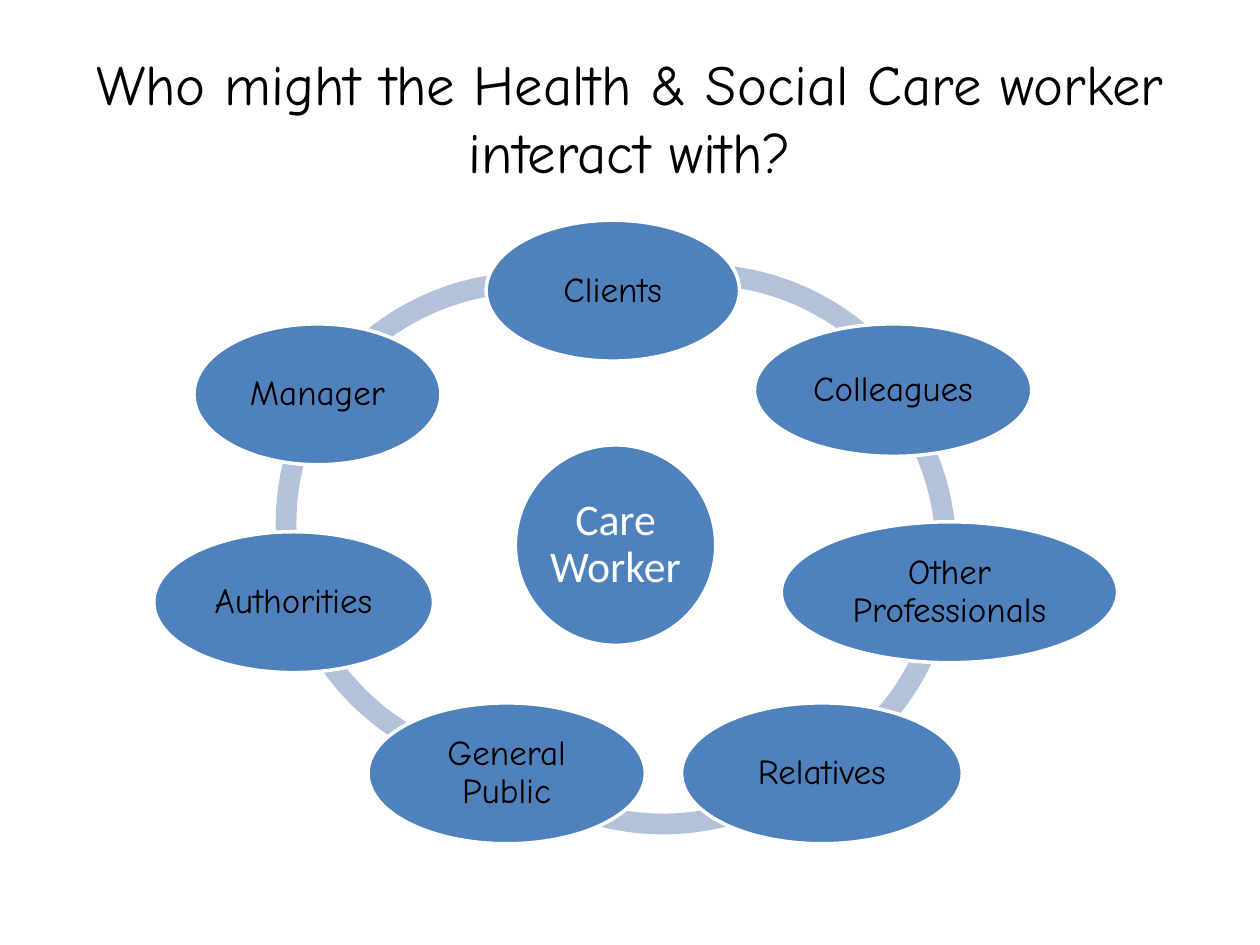
from dataclasses import dataclass

from pptx import Presentation
from pptx import util as u
from pptx.dml.color import RGBColor
from pptx.enum import shapes, text


@dataclass(frozen=True)
class Theme:
    """Colours, fonts and type sizes of the slide."""
    blue: str = "4F81BD"
    ring: str = "B3C1DB"
    white: str = "FFFFFF"
    black: str = "000000"
    hand: str = "Comic Neue"
    sans: str = "Calibri"
    title: float = 32.4
    hub: float = 25
    label: float = 20


THEME = Theme()
ARC_SIZE = 10.44
ARC_THICKNESS = 0.04
ARCS = [
    (5.46, 5.49, 212.7, 288.83),
    (5.56, 5.33, 161.99, 210.75),
    (5.54, 5.28, 96.48, 161.42),
    (8.15, 6.38, 51.48, 128.59),
    (8.84, 5.92, 9.05, 60.71),
    (8.84, 5.89, 320.43, 9.25),
    (8.89, 5.33, 253.43, 325.35),
]
PEOPLE = [
    ("Clients", 9.8, 4.44, 5.11, 2.84),
    ("Colleagues", 15.21, 6.53, 5.59, 2.67),
    ("Other Professionals", 15.75, 10.52, 6.78, 2.84),
    ("Relatives", 13.74, 14.17, 5.66, 2.84),
    ("General Public", 7.42, 14.17, 5.59, 2.84),
    ("Authorities", 3.1, 10.72, 5.64, 2.84),
    ("Manager", 3.91, 6.53, 4.98, 2.84),
]


def apply(target, values):
    """Set each attribute named in a dict of format values."""
    for name, value in values.items():
        setattr(target, name, value)


def write(frame, words, font, size, colour, spacing=None):
    """Write one centred, formatted paragraph into a text frame."""
    apply(frame, {"word_wrap": True, "auto_size": text.MSO_AUTO_SIZE.NONE,
                  "vertical_anchor": text.MSO_ANCHOR.MIDDLE})
    para = frame.paragraphs[0]
    apply(para, {"alignment": text.PP_ALIGN.CENTER, "line_spacing": spacing})
    span = para.add_run()
    span.text = words
    apply(span.font, {"name": font, "size": u.Pt(size)})
    span.font.color.rgb = RGBColor.from_string(colour)


def add_title(page, words):
    """Place and fill the title placeholder."""
    box = page.shapes.title
    apply(box, {"left": u.Cm(1.27), "top": u.Cm(0.76),
                "width": u.Cm(22.86), "height": u.Cm(3.18)})
    write(box.text_frame, words, THEME.hand, THEME.title, THEME.black)


def add_filled(page, kind, bounds, colour):
    """Add a flat preset shape without an outline."""
    shape = page.shapes.add_shape(kind, *map(u.Cm, bounds))
    shape.shadow.inherit = False
    shape.fill.solid()
    shape.fill.fore_color.rgb = RGBColor.from_string(colour)
    shape.line.fill.background()
    return shape


def add_arc(page, left, top, start, end):
    """Add a ring segment running between two angles in degrees."""
    arc = add_filled(page, shapes.MSO_SHAPE.BLOCK_ARC,
                     (left, top, ARC_SIZE, ARC_SIZE), THEME.ring)
    for index, value in enumerate((start * 0.6, end * 0.6, ARC_THICKNESS)):
        arc.adjustments[index] = value


def add_bubble(page, words, bounds, font=THEME.hand, size=THEME.label,
               colour=THEME.black):
    """Add a white-edged ellipse with its label."""
    bubble = add_filled(page, shapes.MSO_SHAPE.OVAL, bounds, THEME.blue)
    bubble.line.color.rgb = RGBColor.from_string(THEME.white)
    bubble.line.width = u.Pt(2)
    sides = ("left", "top", "right", "bottom")
    apply(bubble.text_frame, {f"margin_{side}": u.Cm(0.08) for side in sides})
    write(bubble.text_frame, words, font, size, colour, spacing=0.9)


def main():
    """Build and save the slide."""
    deck = Presentation()
    apply(deck, {"slide_width": u.Cm(25.4), "slide_height": u.Cm(19.05)})
    page = deck.slides.add_slide(deck.slide_layouts[5])
    add_title(page, "Who might the Health & Social Care worker interact with?")
    for arc in ARCS:
        add_arc(page, *arc)
    add_bubble(page, "Care Worker", (10.39, 8.97, 4.04, 4.04),
               THEME.sans, THEME.hub, THEME.white)
    for words, *bounds in PEOPLE:
        add_bubble(page, words, bounds)
    deck.save("out.pptx")


if __name__ == "__main__":
    main()
